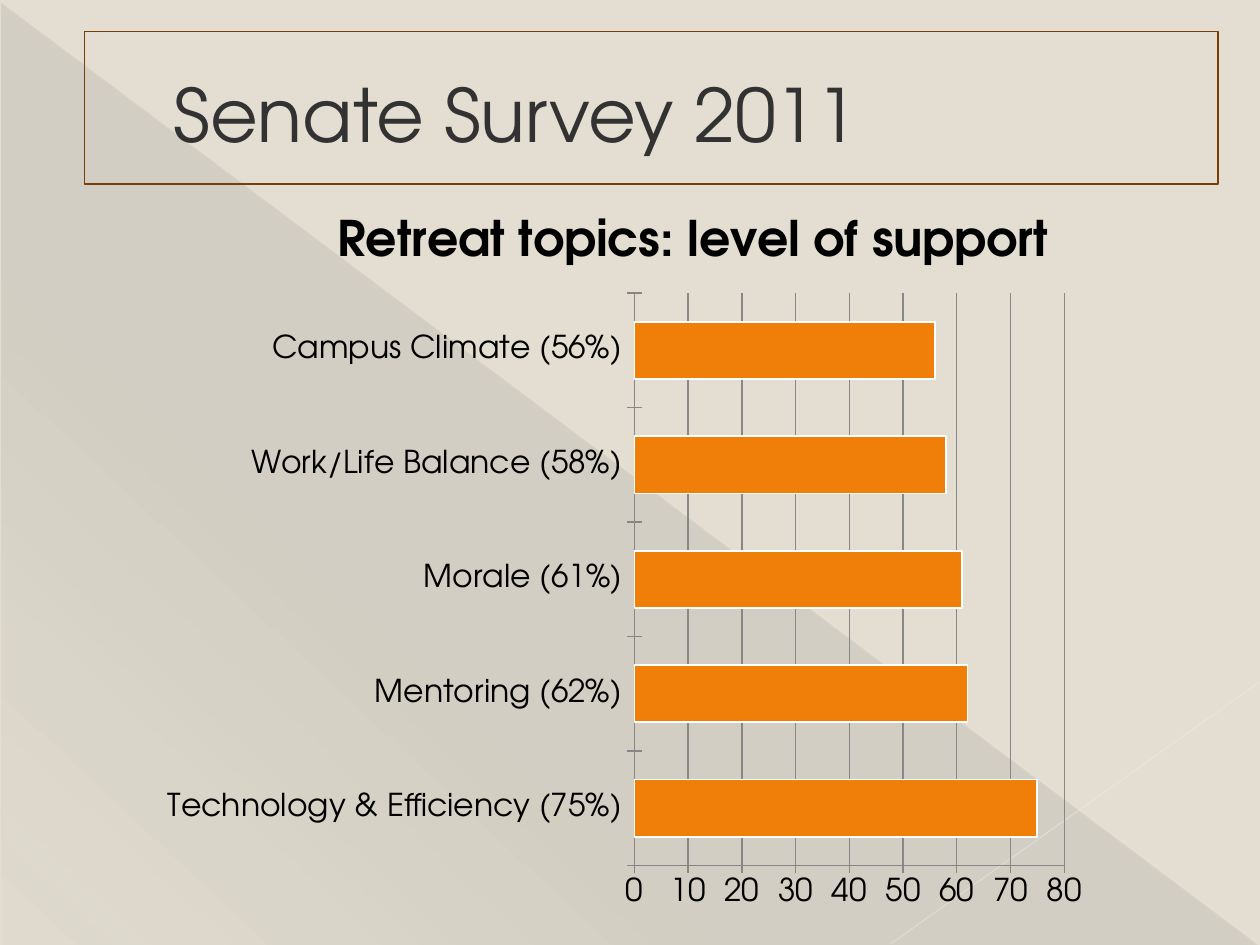
"""Build the Senate Survey slide with its bar chart of retreat topics."""
import pptx
import pptx.chart.data
import pptx.dml.color
import pptx.enum.chart
import pptx.enum.shapes
import pptx.enum.text
import pptx.oxml
import pptx.util
from dataclasses import dataclass
from lxml import etree

Inches, Pt = pptx.util.Inches, pptx.util.Pt
NS = pptx.oxml.ns.nsdecls("a")
QN = pptx.oxml.ns.qn


@dataclass
class Theme:
    font: str = "TeX Gyre Adventor"
    back: str = "E3DED1"
    ink: str = "323232"
    text: str = "000000"
    bar: str = "F07F09"
    edge: str = "FFFFFF"
    frame: str = "784004"
    grid: str = "878787"
    head: int = 42
    title: int = 28
    label: int = 18


THEME = Theme()
HEAD = "Senate Survey 2011"
TITLE = "Retreat topics: level of support"
TOPICS = [
    ("Technology & Efficiency", 75),
    ("Mentoring", 62),
    ("Morale", 61),
    ("Work/Life Balance", 58),
    ("Campus Climate", 56),
]
SHADE = [(0, 10), (70, 8), (100, 1)]
RAYS = [
    ((0, 0.01, 9.99, 7.49), "F5F0E3", 0.39, 35),
    ((10, 5.41, 7.07, 7.49), "F6F1E5", 0.47, 45),
]
PLOT = {"x": 0.51, "y": 0.13, "w": 0.45, "h": 0.79}
SPOT = {"x": 0.19, "y": 0.01}


def box(*dims):
    return [Inches(dim) for dim in dims]


def color(code):
    return pptx.dml.color.RGBColor.from_string(code)


def style(font, size, code, bold=False):
    font.name, font.size, font.bold = THEME.font, Pt(size), bold
    font.color.rgb = color(code)


def stroke(line, code, width):
    line.color.rgb = color(code)
    line.width = Pt(width)


def shade(slide):
    kind = pptx.enum.shapes.MSO_SHAPE.RIGHT_TRIANGLE
    shape = slide.shapes.add_shape(kind, *box(0.01, 0.02, 9.98, 7.48))
    shape.shadow.inherit = False
    shape.line.fill.background()
    shape.fill.background()
    stops = "".join(
        f'<a:gs pos="{pos * 1000}"><a:srgbClr val="{THEME.ink}">'
        f'<a:alpha val="{alpha * 1000}"/></a:srgbClr></a:gs>'
        for pos, alpha in SHADE
    )
    fill = pptx.oxml.parse_xml(
        f'<a:gradFill {NS} rotWithShape="1"><a:gsLst>{stops}</a:gsLst>'
        f'<a:lin ang="{133 * 60000}" scaled="0"/></a:gradFill>'
    )
    props = shape.fill._xPr
    props.replace(props.find(QN("a:noFill")), fill)


def ray(slide, ends, code, width, alpha):
    kind = pptx.enum.shapes.MSO_CONNECTOR.STRAIGHT
    line = slide.shapes.add_connector(kind, *box(*ends))
    stroke(line.line, code, width)
    props = line._element.spPr
    tint = props.find(".//" + QN("a:srgbClr"))
    etree.SubElement(tint, QN("a:alpha"), val=str(alpha * 1000))
    etree.SubElement(props, QN("a:effectLst"))


def place(node, spot, inner=False):
    old = node.find(QN("c:layout"))
    if old is None:
        old = etree.Element(QN("c:layout"))
        node.insert(1 if node.find(QN("c:tx")) is not None else 0, old)
    lay = etree.SubElement(old, QN("c:manualLayout"))
    if inner:
        etree.SubElement(lay, QN("c:layoutTarget"), val="inner")
    for key in "xy":
        etree.SubElement(lay, QN(f"c:{key}Mode"), val="edge")
    for key, val in spot.items():
        etree.SubElement(lay, QN(f"c:{key}"), val=str(val))


def graph(slide):
    data = pptx.chart.data.CategoryChartData()
    data.categories = [f"{name} ({val}%)" for name, val in TOPICS]
    data.add_series("Series 1", [val for _, val in TOPICS])
    kind = pptx.enum.chart.XL_CHART_TYPE.BAR_CLUSTERED
    dims = box(1.17, 1.58, 7.58, 5.75)
    chart = slide.shapes.add_chart(kind, *dims, data).chart
    style(chart.font, THEME.label, THEME.text)
    chart.has_legend = False
    chart.has_title = True
    run = chart.chart_title.text_frame.paragraphs[0].add_run()
    run.text = TITLE
    style(run.font, THEME.title, THEME.text, True)
    chart.chart_title.include_in_layout = False
    place(chart.chart_title._element, SPOT)
    place(chart._chartSpace.chart.plotArea, PLOT, True)
    plot = chart.plots[0]
    plot.gap_width = 100
    plot.vary_by_categories = False
    bars = plot.series[0].format
    bars.fill.solid()
    bars.fill.fore_color.rgb = color(THEME.bar)
    stroke(bars.line, THEME.edge, 1)
    for axis in (chart.category_axis, chart.value_axis):
        axis.major_tick_mark = pptx.enum.chart.XL_TICK_MARK.CROSS
        style(axis.tick_labels.font, THEME.label, THEME.text)
        stroke(axis.format.line, THEME.grid, 0.75)
    axis = chart.value_axis
    axis.minimum_scale, axis.maximum_scale, axis.major_unit = 0, 80, 10
    axis.has_major_gridlines = True
    stroke(axis.major_gridlines.format.line, THEME.grid, 0.75)


def header(slide):
    kind = pptx.enum.shapes.MSO_SHAPE.RECTANGLE
    frame = slide.shapes.add_shape(kind, *box(0.67, 0.25, 9, 1.21))
    frame.shadow.inherit = False
    frame.fill.background()
    stroke(frame.line, THEME.frame, 1)
    text = slide.shapes.add_textbox(*box(0.75, 0.29, 8.75, 1.21)).text_frame
    text.word_wrap = True
    text.vertical_anchor = pptx.enum.text.MSO_ANCHOR.MIDDLE
    para = text.paragraphs[0]
    props = para._p.get_or_add_pPr()
    props.set("marL", str(Inches(0.53)))
    props.set("indent", "0")
    run = para.add_run()
    run.text = HEAD
    style(run.font, THEME.head, THEME.ink)


def main():
    deck = pptx.Presentation()
    deck.slide_width, deck.slide_height = box(10, 7.5)
    slide = deck.slides.add_slide(deck.slide_layouts[6])
    slide.background.fill.solid()
    slide.background.fill.fore_color.rgb = color(THEME.back)
    shade(slide)
    for item in RAYS:
        ray(slide, *item)
    graph(slide)
    header(slide)
    deck.save("out.pptx")


if __name__ == "__main__":
    main()
